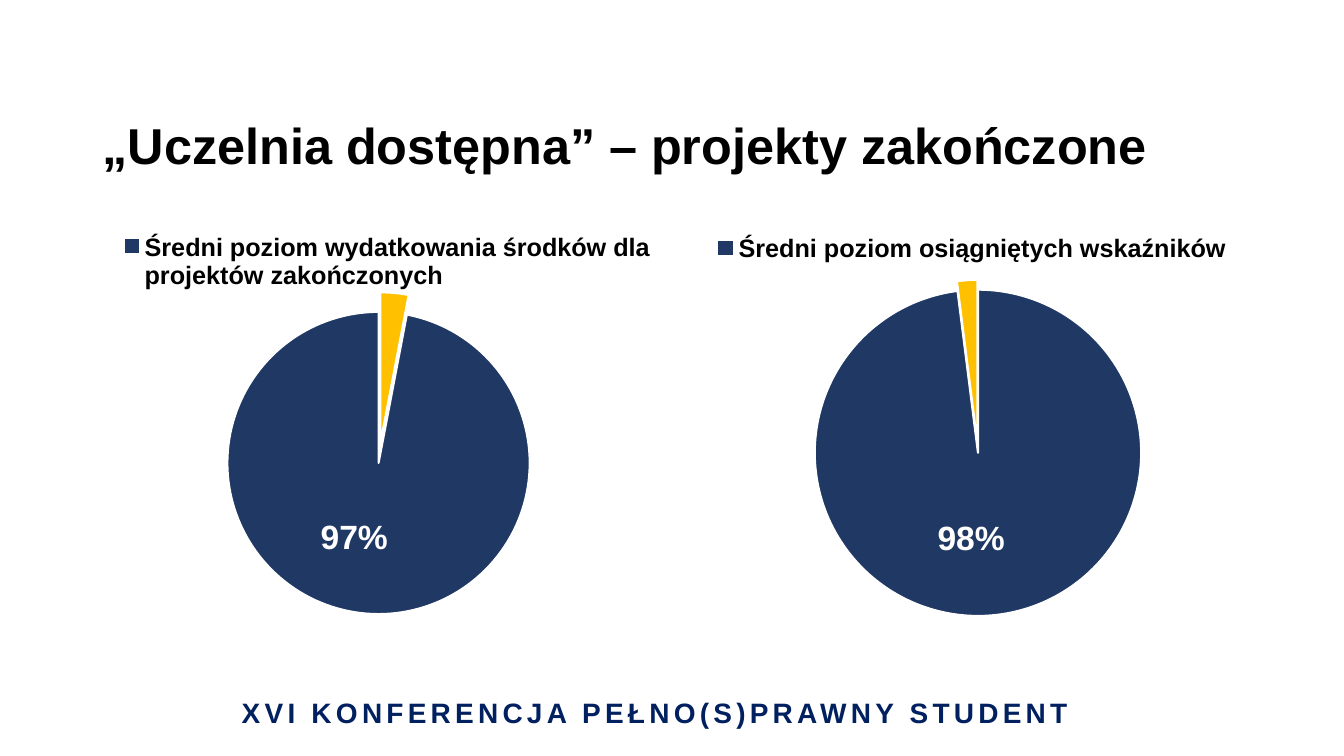
from pptx import Presentation
from pptx.chart.data import CategoryChartData
from pptx.dml.color import RGBColor
from pptx.enum import chart as ch, text
from pptx.oxml import parse_xml
from pptx.oxml.ns import nsdecls, qn
from pptx.util import Inches, Pt

BLACK = RGBColor(0, 0, 0)
WHITE = RGBColor(0xFF, 0xFF, 0xFF)
NAVY = RGBColor(0x00, 0x20, 0x60)
BLUE = RGBColor(0x20, 0x38, 0x64)
GOLD = RGBColor(0xFF, 0xC0, 0x00)
REST = "Pozostało"


def add_text(s, box, words, size, color):
    tf = s.shapes.add_textbox(*map(Inches, box)).text_frame
    tf.word_wrap = True
    p = tf.paragraphs[0]
    p.add_run().text = words
    p.font.name, p.font.size, p.font.bold = "Arial", Pt(size), True
    p.font.color.rgb = color
    return tf, p


def layout(x, y, w=None, h=None, inner=False):
    parts = '<c:layoutTarget val="inner"/>' if inner else ""
    if w:
        parts += '<c:xMode val="edge"/><c:yMode val="edge"/>'
    for tag, val in zip("xywh", (x, y, w, h)):
        if val is not None:
            parts += f'<c:{tag} val="{val}"/>'
    return parse_xml(f'<c:layout {nsdecls("c")}><c:manualLayout>{parts}'
                     '</c:manualLayout></c:layout>')


prs = Presentation()
prs.slide_width, prs.slide_height = Inches(13.33), Inches(7.5)
s = prs.slides.add_slide(prs.slide_layouts[6])

# Conference footer
tf, p = add_text(s, (2.28, 6.85, 8.43, 0.44),
                 "XVI KONFERENCJA PEŁNO(S)PRAWNY STUDENT", 20, NAVY)
p.alignment = text.PP_ALIGN.CENTER
p.runs[0].font._element.set("spc", "300")

# Title
tf, p = add_text(s, (0.92, 0.74, 11.5, 1.45),
                 "„Uczelnia dostępna” – projekty zakończone", 36, BLACK)
tf.vertical_anchor = text.MSO_ANCHOR.MIDDLE
p.line_spacing = 0.9

# Pies: box, categories, values, explosion, plot, legend and label layouts
pies = [
    ((0.92, 2, 5.67, 4.76),
     (REST, "Średni poziom wydatkowania środków dla projektów zakończonych"),
     (0.03, 0.97), 13, (0.23, 0.23, 0.54, 0.63), (0.04, 0.06, 0.95, 0.13),
     (-0.03, 0)),
    ((6.75, 2.19, 5.9, 4.56),
     ("Średni poziom osiągniętych wskaźników", REST),
     (0.98, 0.02), 6, (0.22, 0.15, 0.56, 0.71), (0.03, 0.02, 0.92, 0.08),
     (-0.02, 0.01)),
]
for box, cats, vals, explosion, plot_box, legend_box, label_shift in pies:
    data = CategoryChartData(number_format="0%")
    data.categories = cats
    data.add_series("Series 1", vals)
    chart = s.shapes.add_chart(ch.XL_CHART_TYPE.PIE, *map(Inches, box), data).chart
    chart.has_title = False
    chart.font.name, chart.font.size = "Arial", Pt(10)
    chart.font.color.rgb = BLACK
    plot = chart.plots[0]
    plot.vary_by_categories = True
    area = chart._chartSpace.chart.plotArea
    for old in area.findall(qn("c:layout")):
        area.remove(old)
    area.insert(0, layout(*plot_box, inner=True))

    # Slices
    ser = plot.series[0]
    rest = cats.index(REST)
    for i in range(2):
        fmt = ser.points[i].format
        fmt.fill.solid()
        fmt.fill.fore_color.rgb = GOLD if i == rest else BLUE
        fmt.line.color.rgb = WHITE
        fmt.line.width = Pt(1.5)
    gold = ser._element.findall(qn("c:dPt"))[rest]
    gold.find(qn("c:spPr")).addprevious(
        parse_xml(f'<c:explosion {nsdecls("c")} val="{explosion}"/>'))

    # Percentage on the blue slice only
    ser.data_labels.show_value = False
    label = ser.points[1 - rest].data_label
    label.font.name, label.font.size, label.font.bold = "Arial", Pt(24), True
    label.font.color.rgb = WHITE
    label.position = ch.XL_LABEL_POSITION.CENTER
    ser._element.find(".//" + qn("c:dLbl")).insert(1, layout(*label_shift))

    # Legend without the remainder
    chart.has_legend = True
    legend = chart.legend
    legend.position = ch.XL_LEGEND_POSITION.TOP
    legend.include_in_layout = False
    legend.font.name, legend.font.size, legend.font.bold = "Arial", Pt(18), True
    legend.font.color.rgb = BLACK
    el = legend._element
    for old in el.findall(qn("c:layout")):
        el.remove(old)
    el.insert(1, parse_xml(f'<c:legendEntry {nsdecls("c")}><c:idx val="{rest}"/>'
                           '<c:delete val="1"/></c:legendEntry>'))
    el.insert(2, layout(*legend_box))

prs.save("out.pptx")
